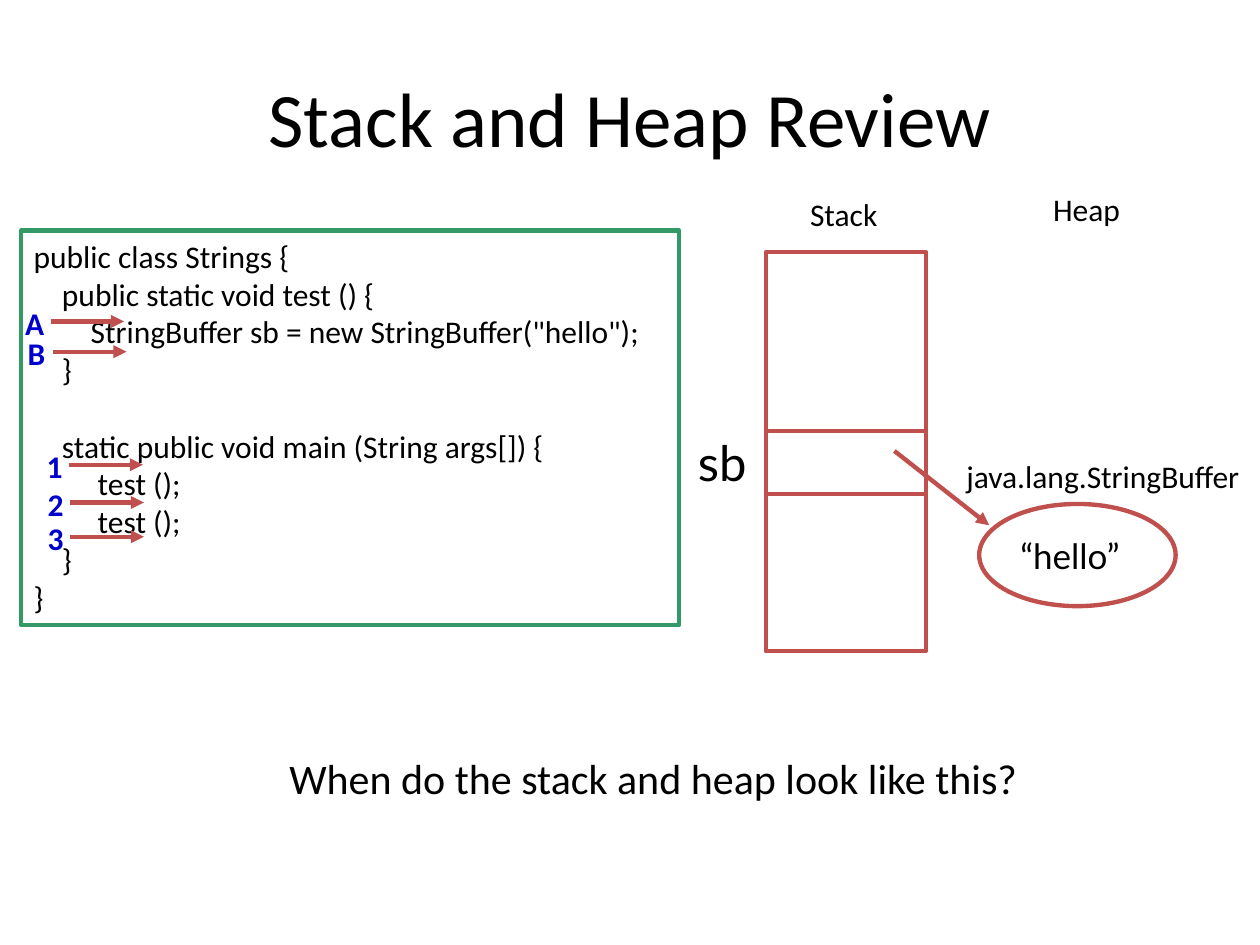
"""Build the Stack and Heap Review slide."""
from typing import NamedTuple

from lxml import etree
from pptx import Presentation
from pptx.dml.color import RGBColor
from pptx.enum import shapes, text
from pptx.oxml.ns import qn
from pptx.util import Cm, Pt

COLORS = {"ink": "000000", "code": "339966", "memory": "C0504D",
          "marker": "0000CC", "paper": "FFFFFF"}
LINE_WIDTH = Pt(2.5)
ARROW_LENGTH = 1.48


class Box(NamedTuple):
    left: float
    top: float
    width: float
    height: float


class Line(NamedTuple):
    words: str
    indent: float = 0
    before: float = 0


class Label(NamedTuple):
    words: str
    box: Box
    size: float = 18
    font: str = "Calibri"
    color: str = "ink"
    bold: bool = False
    align: text.PP_ALIGN = text.PP_ALIGN.LEFT
    anchor: text.MSO_ANCHOR = text.MSO_ANCHOR.TOP
    wrap: bool = False


class Marker(NamedTuple):
    name: str
    x: float
    y: float
    gap: float
    width: float


CODE = [
    Line("public class Strings {"),
    Line("public static void test () {", 0.57),
    Line('StringBuffer sb = new StringBuffer("hello");', 1.15),
    Line("}", 0.57),
    Line("static public void main (String args[]) {", 0.57, 22),
    Line("test ();", 1.29),
    Line("test ();", 1.29),
    Line("}", 0.57),
    Line("}"),
]
LABELS = [
    Label("Stack and Heap Review", Box(1.27, 0.76, 22.86, 3.18), 44,
          align=text.PP_ALIGN.CENTER, anchor=text.MSO_ANCHOR.MIDDLE, wrap=True),
    Label("sb", Box(13.82, 8.59, 1.5, 1.45), 28, "Lato"),
    Label("java.lang.StringBuffer", Box(19.23, 9.09, 6.07, 1.02)),
    Label("Stack", Box(16.08, 3.81, 2.11, 1.02)),
    Label("Heap", Box(20.98, 3.71, 2.03, 1.02)),
    Label("When do the stack and heap look like this?",
          Box(5.51, 15.04, 15.32, 1.27), 24, align=text.PP_ALIGN.CENTER),
]
MARKERS = [
    Marker("A", 1.02, 6.48, 0.76, 0.97),
    Marker("B", 1.07, 7.09, 0.76, 0.97),
    Marker("1", 1.4, 9.37, 0.71, 0.86),
    Marker("2", 1.42, 10.13, 0.71, 0.86),
    Marker("3", 1.42, 10.82, 0.71, 0.86),
]
CODE_BOX = Box(0.43, 4.65, 13.26, 7.95)
STACK_BOX = Box(15.44, 5.08, 3.23, 8.05)
HEAP_BOX = Box(19.74, 10.16, 3.96, 2.06)
FRAME_EDGES = (8.69, 9.96)


def rgb(name: str) -> RGBColor:
    return RGBColor.from_string(COLORS[name])


def apply(target, values: dict) -> None:
    for key, value in values.items():
        setattr(target, key, value)


def write(tf, lines: list[Line], size: float, font: str = "Calibri",
          color: str = "ink", bold: bool = False,
          align: text.PP_ALIGN = text.PP_ALIGN.LEFT) -> None:
    for i, line in enumerate(lines):
        p = tf.paragraphs[0] if i == 0 else tf.add_paragraph()
        apply(p, {"alignment": align, "space_before": Pt(line.before)})
        p._p.get_or_add_pPr().set("marL", str(Cm(line.indent)))
        r = p.add_run()
        r.text = line.words
        apply(r.font, {"size": Pt(size), "name": font, "bold": bold})
        r.font.color.rgb = rgb(color)


def add_label(s, label: Label) -> None:
    tf = s.shapes.add_textbox(*map(Cm, label.box)).text_frame
    apply(tf, {"word_wrap": label.wrap, "vertical_anchor": label.anchor})
    write(tf, [Line(label.words)], label.size, label.font, label.color,
          label.bold, label.align)


def add_outline(s, kind: shapes.MSO_SHAPE, box: Box, color: str,
                fill: str | None = None):
    sp = s.shapes.add_shape(kind, *map(Cm, box))
    sp.shadow.inherit = False
    if fill:
        sp.fill.solid()
        sp.fill.fore_color.rgb = rgb(fill)
    else:
        sp.fill.background()
    sp.line.color.rgb = rgb(color)
    sp.line.width = LINE_WIDTH
    return sp


def add_line(s, x1: float, y1: float, x2: float, y2: float,
             arrow: bool = False) -> None:
    cn = s.shapes.add_connector(shapes.MSO_CONNECTOR.STRAIGHT,
                                *map(Cm, (x1, y1, x2, y2)))
    cn.line.color.rgb = rgb("memory")
    cn.line.width = LINE_WIDTH
    if arrow:
        etree.SubElement(cn.line._get_or_add_ln(), qn("a:tailEnd"), type="triangle")
    etree.SubElement(cn._element.spPr, qn("a:effectLst"))


def add_marker(s, m: Marker) -> None:
    add_line(s, m.x, m.y, m.x + ARROW_LENGTH, m.y, arrow=True)
    box = Box(m.x - m.gap, m.y - 0.48, m.width, 1.02)
    add_label(s, Label(m.name, box, color="marker", bold=True))


def main() -> None:
    prs = Presentation()
    apply(prs, {"slide_width": Cm(25.4), "slide_height": Cm(19.05)})
    s = prs.slides.add_slide(prs.slide_layouts[6])

    tf = add_outline(s, shapes.MSO_SHAPE.RECTANGLE, CODE_BOX, "code").text_frame
    apply(tf, {"word_wrap": True, "vertical_anchor": text.MSO_ANCHOR.TOP})
    write(tf, CODE, 18)

    add_outline(s, shapes.MSO_SHAPE.RECTANGLE, STACK_BOX, "memory")
    for y in FRAME_EDGES:
        add_line(s, STACK_BOX.left, y, STACK_BOX.left + STACK_BOX.width, y)
    add_line(s, 18.03, 9.09, 19.94, 10.59, arrow=True)

    tf = add_outline(s, shapes.MSO_SHAPE.OVAL, HEAP_BOX, "memory", "paper").text_frame
    apply(tf, {"word_wrap": True, "vertical_anchor": text.MSO_ANCHOR.MIDDLE,
               "margin_top": Cm(0.38), "margin_bottom": Cm(0.38)})
    write(tf, [Line("“hello”")], 20, "Lato")

    for label in LABELS:
        add_label(s, label)
    for marker in MARKERS:
        add_marker(s, marker)
    prs.save("out.pptx")


if __name__ == "__main__":
    main()
